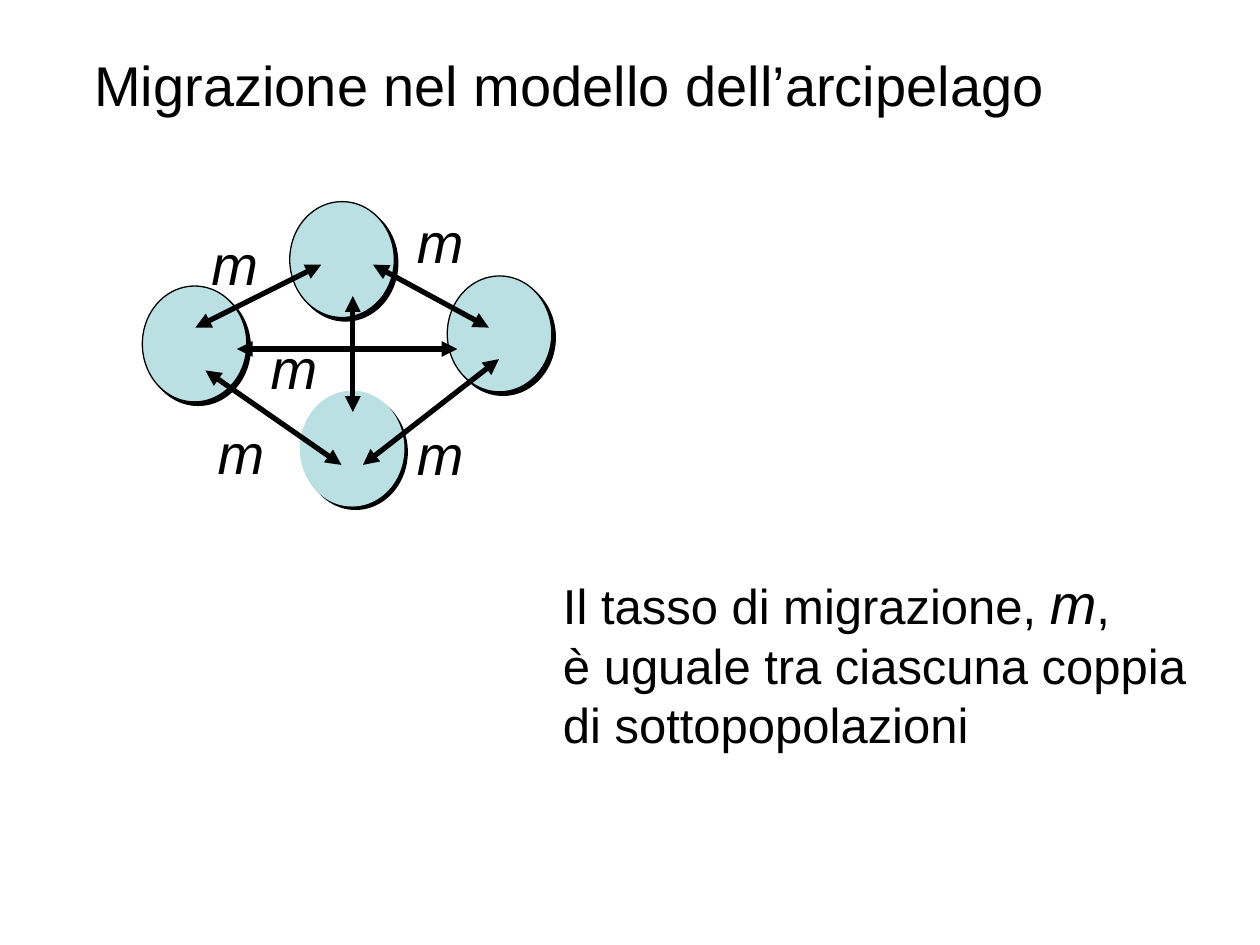
from lxml import etree
from pptx import Presentation
from pptx.dml.color import RGBColor
from pptx.enum.shapes import MSO_CONNECTOR, MSO_SHAPE
from pptx.enum.text import MSO_AUTO_SIZE
from pptx.oxml.ns import qn
from pptx.util import Inches, Pt

OVAL = MSO_SHAPE.OVAL
STRAIGHT = MSO_CONNECTOR.STRAIGHT
FIT_SHAPE = MSO_AUTO_SIZE.SHAPE_TO_FIT_TEXT

FONT = "Arial"
COLORS = {"ink": "000000", "island": "BBE0E3"}
ISLAND_SIZE = (0.83, 0.92)
RATE_SIZE = (0.57, 0.63)

# Left, top, outlined
ISLANDS = [
    (1.13, 2.27, True),
    (2.3, 1.6, True),
    (2.38, 3.1, False),
    (3.55, 2.19, True),
]
# Start x, start y, end x, end y
MIGRATIONS = [
    (1.63, 2.94, 2.71, 3.69),
    (1.55, 2.6, 2.55, 2.1),
    (3.96, 2.85, 2.88, 3.69),
    (2.8, 2.35, 2.8, 3.27),
    (1.88, 2.77, 3.63, 2.77),
    (2.96, 2.1, 3.88, 2.6),
]
RATE_POSITIONS = [(3.21, 3.28), (1.58, 1.77), (1.63, 3.27), (2.05, 2.6), (3.21, 1.6)]

# Each paragraph is a list of runs: text, size, italic
TITLE = [[("Migrazione nel modello dell’arcipelago", 32, False)]]
RATE = [[("m", 32, True)]]
EXPLANATION = [
    [("Il tasso di migrazione, ", 28, False), ("m", 32, True), (",", 28, False)],
    [("è uguale tra ciascuna coppia", 28, False)],
    [("di sottopopolazioni", 28, False)],
]


def color(name):
    return RGBColor.from_string(COLORS[name])


def add_text(slide, left, top, width, height, paragraphs):
    box = slide.shapes.add_textbox(
        Inches(left), Inches(top), Inches(width), Inches(height))
    text_frame = box.text_frame
    text_frame.word_wrap = False
    text_frame.auto_size = FIT_SHAPE
    for index, runs in enumerate(paragraphs):
        paragraph = text_frame.add_paragraph() if index else text_frame.paragraphs[0]
        for text, size, italic in runs:
            run = paragraph.add_run()
            run.text = text
            run.font.name = FONT
            run.font.size = Pt(size)
            run.font.italic = italic
            run.font.color.rgb = color("ink")


def add_hard_shadow(shape):
    shape.shadow.inherit = False
    effects = shape._element.spPr.find(qn("a:effectLst"))
    shadow = etree.SubElement(
        effects, qn("a:outerShdw"), dist=str(Pt(2.8)), dir="2700000",
        algn="ctr", rotWithShape="0")
    etree.SubElement(shadow, qn("a:srgbClr"), val=COLORS["ink"])


def add_island(slide, left, top, outlined):
    width, height = ISLAND_SIZE
    island = slide.shapes.add_shape(
        OVAL, Inches(left), Inches(top), Inches(width), Inches(height))
    island.fill.solid()
    island.fill.fore_color.rgb = color("island")
    if outlined:
        island.line.color.rgb = color("ink")
        island.line.width = Pt(0.75)
    else:
        island.line.fill.background()
    add_hard_shadow(island)


def add_double_arrow(slide, start_x, start_y, end_x, end_y):
    arrow = slide.shapes.add_connector(
        STRAIGHT, Inches(start_x), Inches(start_y), Inches(end_x), Inches(end_y))
    arrow.line.color.rgb = color("ink")
    arrow.line.width = Pt(3)
    properties = arrow._element.spPr
    for end in ("a:headEnd", "a:tailEnd"):
        etree.SubElement(properties.find(qn("a:ln")), qn(end), type="triangle")
    etree.SubElement(properties, qn("a:effectLst"))


def main():
    presentation = Presentation()
    presentation.slide_width = Inches(10)
    presentation.slide_height = Inches(7.5)
    slide = presentation.slides.add_slide(presentation.slide_layouts[6])

    # Title
    add_text(slide, 0.65, 0.35, 8.05, 0.64, TITLE)

    # Archipelago: islands, migrations and their rates
    for island in ISLANDS:
        add_island(slide, *island)
    for migration in MIGRATIONS:
        add_double_arrow(slide, *migration)
    for position in RATE_POSITIONS:
        add_text(slide, *position, *RATE_SIZE, RATE)

    # Explanation
    add_text(slide, 4.37, 4.46, 5.16, 1.57, EXPLANATION)

    presentation.save("out.pptx")


if __name__ == "__main__":
    main()
